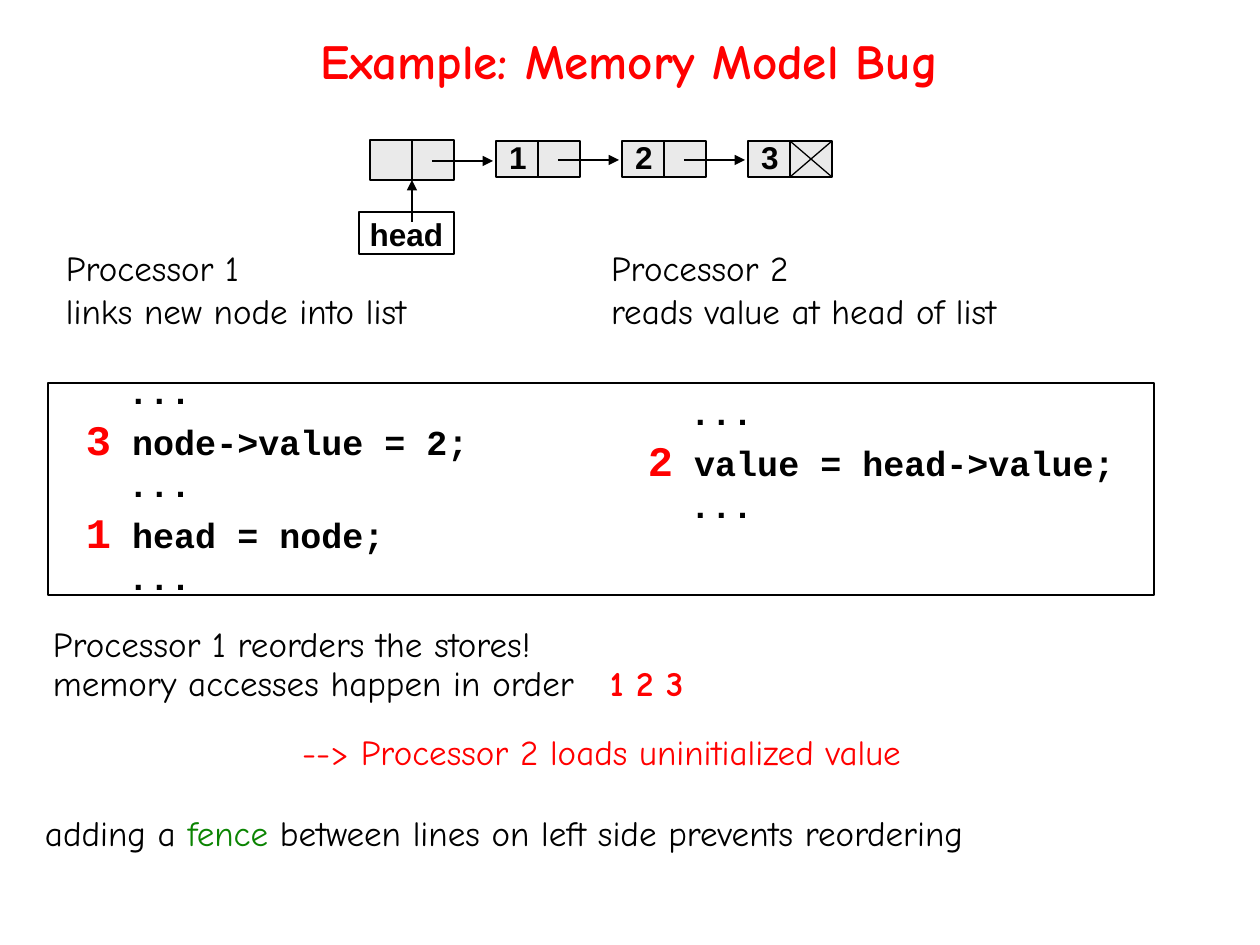
from lxml import etree
from pptx import Presentation, util as u
from pptx.dml.color import RGBColor
from pptx.enum import shapes, text
from pptx.oxml.ns import qn

BLACK = RGBColor(0x00, 0x00, 0x00)
WHITE = RGBColor(0xFF, 0xFF, 0xFF)
RED = RGBColor(0xFF, 0x00, 0x00)
GREEN = RGBColor(0x0B, 0x84, 0x02)
GREY = RGBColor(0xEA, 0xEA, 0xEA)
HAND, CODE, LABEL = "Comic Neue", "Courier New", "Arial"
PAD_X, PAD_Y = 13, 6


def px(length):
    return u.Emu(round(length * 914400 / 126))


def add_span(para, words, font, size, color=BLACK, bold=False):
    span = para.add_run()
    span.text = words
    span.font.name, span.font.size = font, u.Pt(size)
    span.font.color.rgb, span.font.bold = color, bold


def set_tab(para, stop):
    tabs = etree.SubElement(para._p.get_or_add_pPr(), qn("a:tabLst"))
    etree.SubElement(tabs, qn("a:tab"), pos=str(px(stop)), algn="l")


def add_paras(page, box, count, spacing=0.93, before=0):
    """Add a text box and return its paragraphs, ready for runs."""
    frame = page.shapes.add_textbox(*map(px, box)).text_frame
    frame.word_wrap = True
    frame.margin_left = frame.margin_right = px(PAD_X)
    frame.margin_top = frame.margin_bottom = px(PAD_Y)
    paras = [frame.paragraphs[0]] + [frame.add_paragraph() for _ in range(count - 1)]
    for para in paras:
        para.line_spacing = spacing
        para.space_before = u.Pt(before)
    return paras


def add_rect(page, box, width, fill=None):
    rect = page.shapes.add_shape(shapes.MSO_SHAPE.RECTANGLE, *map(px, box))
    rect.shadow.inherit = False
    rect.line.color.rgb, rect.line.width = BLACK, u.Pt(width)
    if fill is None:
        rect.fill.background()
    else:
        rect.fill.solid()
        rect.fill.fore_color.rgb = fill
    return rect


def label_rect(rect, words, align, top=0):
    frame = rect.text_frame
    frame.word_wrap = False
    frame.margin_left = frame.margin_right = px(PAD_X)
    frame.margin_top, frame.margin_bottom = px(top), 0
    frame.vertical_anchor = text.MSO_ANCHOR.MIDDLE
    para = frame.paragraphs[0]
    para.alignment, para.line_spacing = align, 0.93
    add_span(para, words, LABEL, 18, bold=True)


def add_line(page, start, end, width=1, arrow=False):
    line = page.shapes.add_connector(
        shapes.MSO_CONNECTOR.STRAIGHT, *map(px, (*start, *end)))
    line.line.color.rgb, line.line.width = BLACK, u.Pt(width)
    if arrow:
        etree.SubElement(line.line._get_or_add_ln(), qn("a:tailEnd"), type="triangle")
    etree.SubElement(line._element.spPr, qn("a:effectLst"))
    return line


def add_title(page, box):
    para, = add_paras(page, box, 1)
    para.alignment = text.PP_ALIGN.CENTER
    page.shapes[-1].text_frame.vertical_anchor = text.MSO_ANCHOR.MIDDLE
    add_span(para, "Example: Memory Model Bug", HAND, 28, RED, True)


def add_node(page, box, value, last):
    """Draw a list cell: value half, then a pointer arrow or a null cross."""
    left, top, width, height = box
    right, bottom, middle = left + width, top + height, left + width // 2
    node = add_rect(page, box, 1, GREY)
    if value:
        label_rect(node, value, text.PP_ALIGN.LEFT)
    divider = add_line(page, (middle, top), (middle, bottom))
    divider.begin_connect(node, 0)
    divider.end_connect(node, 2)
    if last:
        add_line(page, (middle, top), (right, bottom), 0.75)
        add_line(page, (middle, bottom), (right, top), 0.75)
    else:
        level = top + height // 2 + 1
        add_line(page, (left + 62, level), (left + 123, level), arrow=True)
    return node


def add_list(page, box):
    """Draw the linked list and the head pointer below its first cell."""
    left, top, width, height = box
    pitch, cell = 126, 84
    head = add_rect(page, (left - 11, top + 72, 95, 42), 0.75, WHITE)
    label_rect(head, "head", text.PP_ALIGN.CENTER, 6)
    first = add_node(page, (left, top, cell, 40), "", False)
    for step, value in enumerate("123", 1):
        add_node(page, (left + step * pitch, top + 1, cell, 36), value, value == "3")
    middle = left + cell // 2
    pointer = add_line(page, (middle, top + 82), (middle, top + 40), 0.75, True)
    pointer.end_connect(first, 2)


def add_processor(page, box, lines):
    for para, words in zip(add_paras(page, box, len(lines), before=2.5), lines):
        add_span(para, words, HAND, 20)


def add_code(page, box, lines):
    """Write (order number, statement) lines; unnumbered ones are indented."""
    for para, (order, code) in zip(add_paras(page, box, len(lines), 0.94), lines):
        if order:
            para.space_after = u.Pt(0.5)
            add_span(para, order, CODE, 24, RED, True)
            code = " " + code
        else:
            para.space_after = u.Pt(3)
            para._p.get_or_add_pPr().set("marL", str(px(42)))
        add_span(para, code, CODE, 20, bold=True)


def add_reordering(page, box):
    first, second = add_paras(page, box, 2)
    add_span(first, "Processor 1 reorders the stores!", HAND, 20)
    set_tab(second, 557)
    add_span(second, "memory accesses happen in order\t", HAND, 20)
    add_span(second, "1 2 3", HAND, 20, RED, True)


def add_remark(page, box, spans):
    para, = add_paras(page, box, 1)
    for words, color in spans:
        add_span(para, words, HAND, 20, color)


def main():
    deck = Presentation()
    deck.slide_width, deck.slide_height = px(1260), px(945)
    page = deck.slides.add_slide(deck.slide_layouts[6])
    add_title(page, (94, -15, 1071, 157))
    add_processor(page, (53, 244, 514, 147), ["Processor 1", "links new node into list"])
    add_processor(page, (598, 244, 587, 136), ["Processor 2", "reads value at head of list"])
    add_rect(page, (48, 383, 1106, 212), 0.75)
    gap = ("", "...")
    add_code(page, (73, 367, 430, 238),
             [gap, ("3", "node->value = 2;"), gap, ("1", "head = node;"), gap])
    add_code(page, (635, 388, 556, 199), [gap, ("2", "value = head->value;"), gap])
    add_reordering(page, (40, 620, 1200, 91))
    add_remark(page, (289, 728, 664, 52),
               [("--> Processor 2 loads uninitialized value", RED)])
    add_remark(page, (32, 809, 1187, 52),
               [("adding a ", BLACK), ("fence", GREEN),
                (" between lines on left side prevents reordering", BLACK)])
    add_list(page, (370, 140, 462, 114))
    deck.save("out.pptx")


if __name__ == "__main__":
    main()
